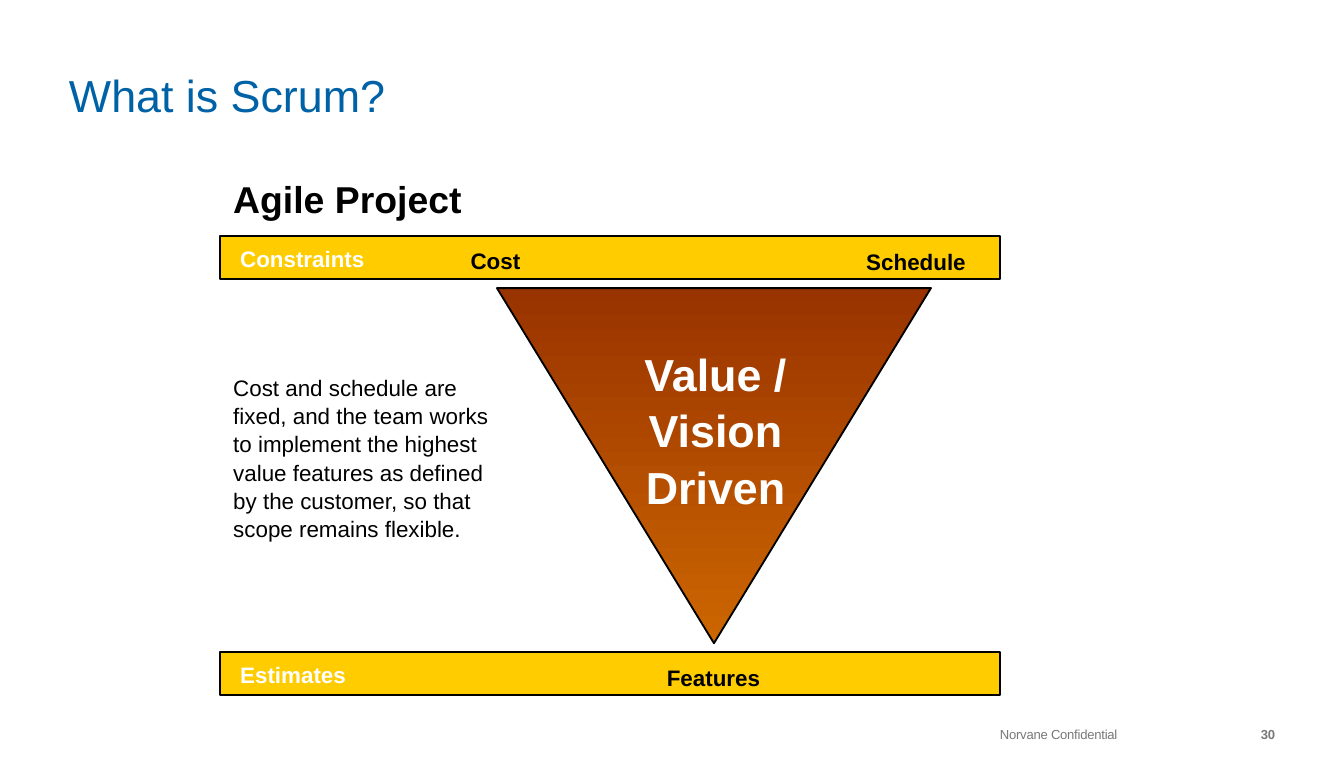
from pptx import Presentation
from pptx import util as u
from pptx.dml.color import RGBColor
from pptx.enum import shapes, text

PX = 914400 / 134.4

TITLE_BLUE = RGBColor(0x00, 0x62, 0xA6)
FOOTER_GRAY = RGBColor(0x78, 0x77, 0x7A)
BAR_YELLOW = RGBColor(0xFF, 0xCC, 0x00)
ORANGE = RGBColor(0xCC, 0x66, 0x00)
RUST = RGBColor(0x99, 0x33, 0x00)
BLACK = RGBColor(0, 0, 0)
WHITE = RGBColor(0xFF, 0xFF, 0xFF)

LEFT, CENTER, RIGHT = text.PP_ALIGN.LEFT, text.PP_ALIGN.CENTER, text.PP_ALIGN.RIGHT


def px(*lengths):
    return [u.Emu(round(length * PX)) for length in lengths]


def add_label(slide, words, box, size, color, bold=False, align=LEFT, line_spacing=1.05):
    label = slide.shapes.add_textbox(*px(*box))
    frame = label.text_frame
    frame.word_wrap = True
    paragraph = frame.paragraphs[0]
    paragraph.text = words
    paragraph.alignment = align
    paragraph.line_spacing = line_spacing
    font = paragraph.font
    font.name, font.size, font.bold = "Arial", u.Pt(size), bold
    font.color.rgb = color
    return frame


def remove_margins(frame):
    frame.margin_left = frame.margin_top = frame.margin_right = frame.margin_bottom = 0


def add_footer(slide, words, box, bold=False, align=LEFT):
    frame = add_label(slide, words, box, 7, FOOTER_GRAY, bold, align, 1.0)
    remove_margins(frame)
    frame.paragraphs[0].runs[0].font._element.set("spc", "-10")


def add_outlined(slide, kind, box):
    shape = slide.shapes.add_shape(kind, *px(*box))
    shape.shadow.inherit = False
    shape.line.color.rgb = BLACK
    shape.line.width = u.Pt(1)
    return shape


def add_bar(slide, heading, top):
    bar = add_outlined(slide, shapes.MSO_SHAPE.RECTANGLE, (220, top, 780, 43))
    bar.fill.solid()
    bar.fill.fore_color.rgb = BAR_YELLOW
    add_label(slide, heading, (227, top + 1, 269, 38), 12, WHITE, bold=True)


def add_value_triangle(slide):
    triangle = add_outlined(slide, shapes.MSO_SHAPE.ISOSCELES_TRIANGLE, (497, 288, 434, 355))
    triangle._element.spPr.xfrm.set("flipV", "1")
    triangle.fill.gradient()
    triangle.fill.gradient_angle = 270
    for stop, color in zip(triangle.fill.gradient_stops, (ORANGE, RUST)):
        stop.color.rgb = color
    add_label(slide, "Value / Vision Driven", (590, 337, 251, 175), 24, WHITE, True, CENTER)


def main():
    deck = Presentation()
    deck.slide_width, deck.slide_height = u.Inches(10), u.Inches(5.63)
    slide = deck.slides.add_slide(deck.slide_layouts[6])

    # Footer
    add_footer(slide, "Norvane Confidential", (1000, 726, 142, 16))
    add_footer(slide, "30", (1134, 726, 141, 16), bold=True, align=RIGHT)

    # Title
    title = add_label(slide, "What is Scrum?", (69, 0, 1074, 121), 24, TITLE_BLUE, line_spacing=1.0)
    remove_margins(title)
    title.vertical_anchor = text.MSO_ANCHOR.BOTTOM

    # Inverted triangle between the two bars
    add_value_triangle(slide)
    add_bar(slide, "Constraints", 236)
    add_bar(slide, "Estimates", 652)

    # Corners of the triangle
    for corner, box in (
        ("Features", (653, 656, 121, 38)),
        ("Cost", (435, 239, 121, 38)),
        ("Schedule", (841, 240, 150, 38)),
    ):
        add_label(slide, corner, box, 12, BLACK, True, CENTER)

    # Explanation
    add_label(
        slide,
        "Cost and schedule are fixed, and the team works to implement the highest "
        "value features as defined by the customer, so that scope remains flexible.",
        (220, 366, 301, 175), 12, BLACK,
    )
    add_label(slide, "Agile Project", (220, 167, 269, 55), 20, BLACK, bold=True)

    deck.save("out.pptx")


if __name__ == "__main__":
    main()
